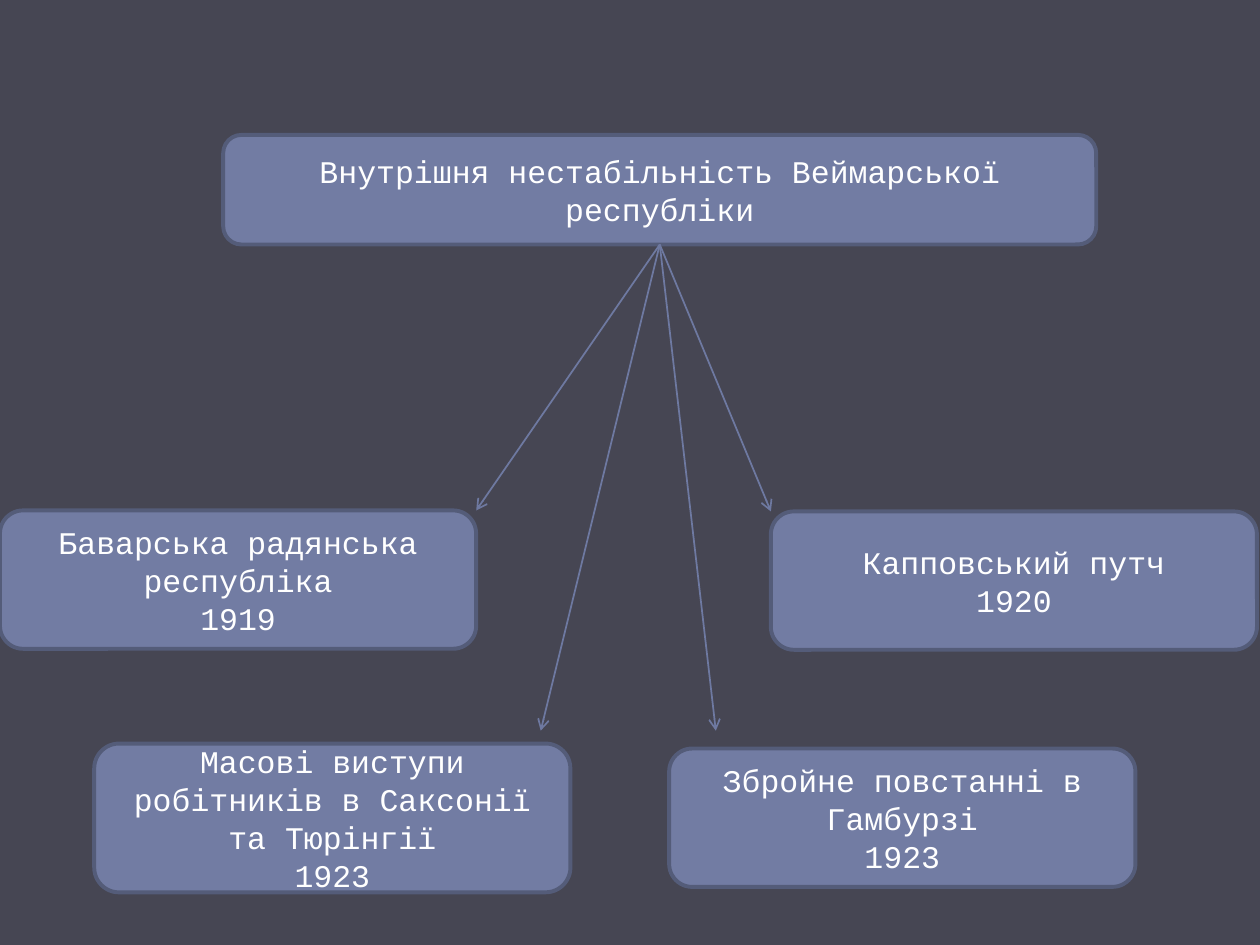
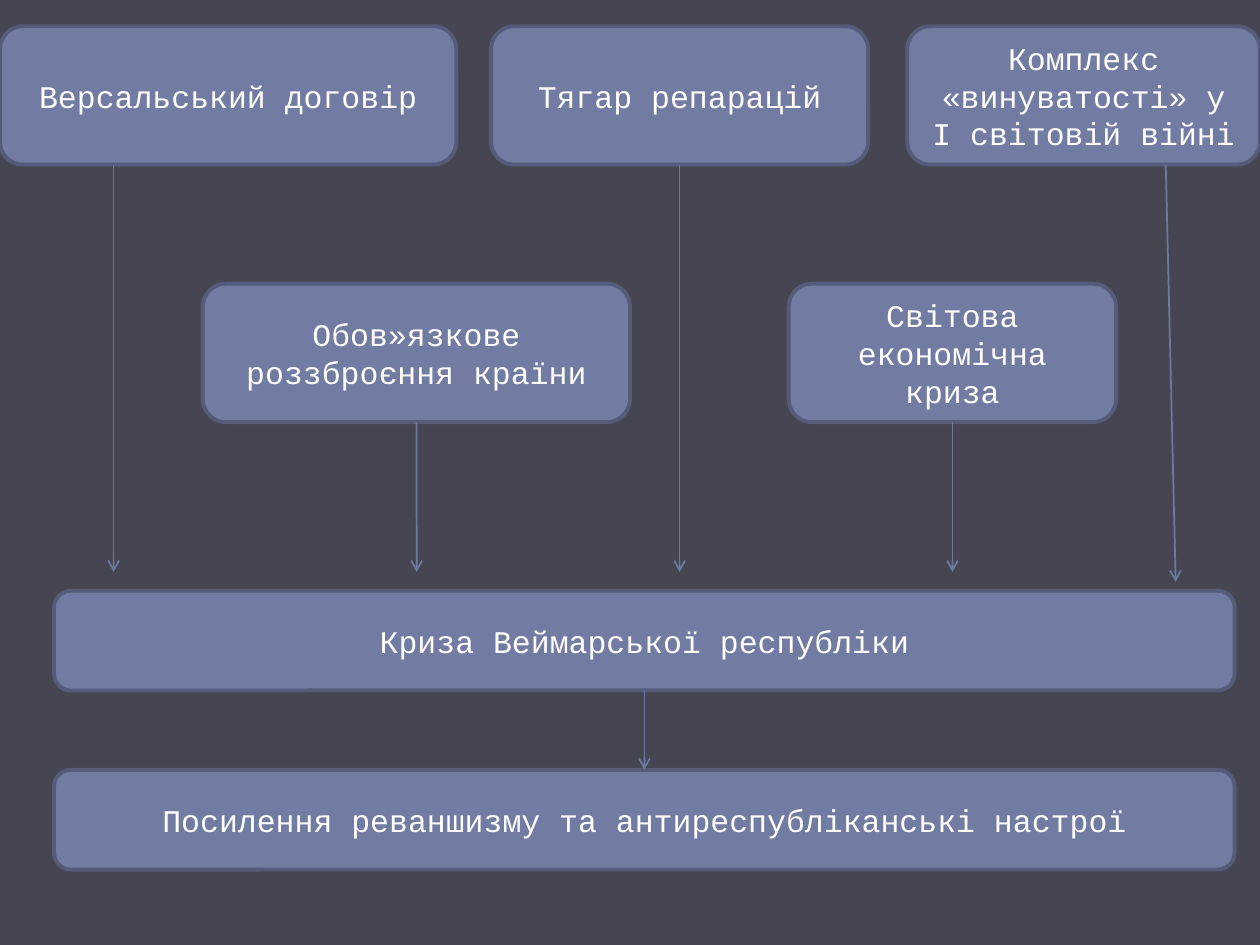
import pptx
import pptx.util
import pptx.dml.color
import pptx.enum.shapes
import pptx.enum.text
import pptx.oxml
import pptx.oxml.ns

Cm = pptx.util.Cm
Pt = pptx.util.Pt

HUES = {"back": "464653", "fill": "727CA3", "edge": "545C79",
        "line": "6E79A1", "text": "FFFFFF"}
FONT = "Courier New"
TALL = 2.79   # height of a cause box
BAND = 2.01   # height of a wide result box


def hue(name):
    return pptx.dml.color.RGBColor.from_string(HUES[name])


def add_page(deck):
    page = deck.slides.add_slide(deck.slide_layouts[6])
    page.background.fill.solid()
    page.background.fill.fore_color.rgb = hue("back")
    return page


def write(frame, text, size=18, color="text", font=FONT,
          align=pptx.enum.text.PP_ALIGN.CENTER):
    frame.word_wrap = True
    frame.vertical_anchor = pptx.enum.text.MSO_ANCHOR.MIDDLE
    frame.text = text
    for para in frame.paragraphs:
        para.alignment = align
        for run in para.runs:
            run.font.size = Pt(size)
            run.font.name = font
            run.font.color.rgb = hue(color)


def add_box(page, text, left, top, width, height=TALL):
    box = page.shapes.add_shape(
        pptx.enum.shapes.MSO_SHAPE.ROUNDED_RECTANGLE,
        Cm(left), Cm(top), Cm(width), Cm(height))
    box.shadow.inherit = False
    box.fill.solid()
    box.fill.fore_color.rgb = hue("fill")
    box.line.color.rgb = hue("edge")
    box.line.width = Pt(2.25)
    write(box.text_frame, text)
    return box


def add_arrow(page, start, end):
    """Start and end are points in cm."""
    arrow = page.shapes.add_connector(
        pptx.enum.shapes.MSO_CONNECTOR.STRAIGHT,
        *(Cm(n) for n in (*start, *end)))
    arrow.line.color.rgb = hue("line")
    arrow.line.width = Pt(1)
    tail = pptx.oxml.parse_xml(
        f'<a:tailEnd {pptx.oxml.ns.nsdecls("a")} type="arrow"/>')
    arrow.line._get_or_add_ln().append(tail)
    arrow._element.spPr.append(pptx.oxml.parse_xml(
        f'<a:effectLst {pptx.oxml.ns.nsdecls("a")}/>'))
    return arrow


def add_drop(page, box, end):
    """Arrow from the middle of a box's lower side to a point."""
    start = ((box.left + box.width / 2) / Cm(1),
             (box.top + box.height) / Cm(1))
    arrow = add_arrow(page, start, end)
    arrow.begin_connect(box, 2)
    return arrow


def draw_unrest(deck):
    page = add_page(deck)
    # Events
    add_box(page, "Баварська радянська республіка\n1919", 0, 10.29, 9.6)
    add_box(page, "Капповський путч\n1920", 15.54, 10.31, 9.8)
    add_box(page, "Масові виступи робітників в Саксонії та Тюрінгії\n1923",
            1.9, 14.99, 9.6, 3)
    add_box(page, "Збройне повстанні в Гамбурзі\n1923", 13.49, 15.09, 9.4)
    # Heading and its arrows
    head = add_box(page, "Внутрішня нестабільність Веймарської республіки",
                   4.5, 2.72, 17.6, 2.21)
    for end in ((9.6, 10.29), (15.54, 10.31), (10.9, 14.73), (14.43, 14.73)):
        add_drop(page, head, end)


def draw_crisis(deck):
    page = add_page(deck)
    high, low, stop = 0.53, 5.72, 11.53
    # Causes in two rows
    add_box(page, "Версальський договір", 0, high, 9.2)
    debt = add_box(page, "Тягар репарацій", 9.9, high, 7.6)
    add_box(page, "Комплекс «винуватості» у І світовій війні",
            18.29, high, 7.11)
    arms = add_box(page, "Обов»язкове роззброєння країни", 4.09, low, 8.61)
    slump = add_box(page, "Світова економічна криза", 15.9, low, 6.6)
    # Results
    fall, mood = (
        add_box(page, text, 1.09, top, 23.8, BAND) for text, top in (
            ("Криза Веймарської республіки", 11.91),
            ("Посилення реваншизму та антиреспубліканські настрої", 15.52)))
    # Arrows
    add_arrow(page, (2.29, high + TALL), (2.29, stop))
    add_arrow(page, (23.5, high + TALL), (23.7, 11.73))
    for box, mid in ((debt, 13.7), (arms, 8.4), (slump, 19.2)):
        add_drop(page, box, (mid, stop))
    add_drop(page, fall, (12.99, 15.52)).end_connect(mood, 0)


def main():
    deck = pptx.Presentation()
    deck.slide_width, deck.slide_height = Cm(25.4), Cm(19.05)
    draw_unrest(deck)
    draw_crisis(deck)
    deck.save("out.pptx")


if __name__ == "__main__":
    main()
